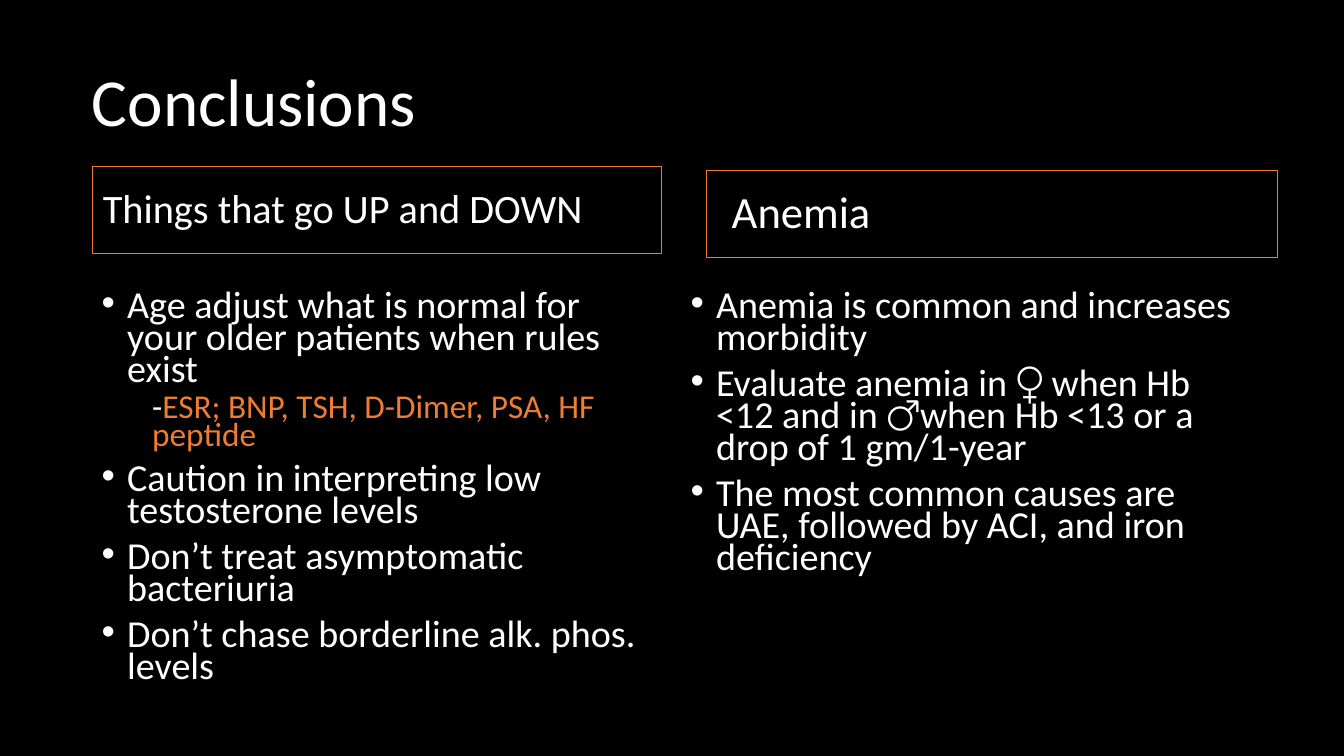
from lxml.etree import SubElement
from pptx import Presentation
from pptx.dml.color import RGBColor
from pptx.enum.text import MSO_ANCHOR, MSO_AUTO_SIZE, PP_ALIGN
from pptx.oxml.ns import qn
from pptx.util import Cm, Pt

COLORS = {"background": "000000", "text": "FFFFFF", "accent": "ED7D31"}
FRAME = {"word_wrap": True, "auto_size": MSO_AUTO_SIZE.NONE}
HEADING_FRAME = {**FRAME, "vertical_anchor": MSO_ANCHOR.MIDDLE}
LIST_FRAME = {**FRAME, "vertical_anchor": MSO_ANCHOR.TOP}
HEADING = {"alignment": PP_ALIGN.LEFT, "line_spacing": 0.9, "space_before": Pt(0)}
BULLET = {"alignment": PP_ALIGN.LEFT, "line_spacing": 0.7, "space_before": Pt(10), "level": 0}
DETAIL = {**BULLET, "space_before": Pt(5), "level": 1}


def place(shape, box, frame_format):
    shape.left, shape.top, shape.width, shape.height = [Cm(length) for length in box]
    for name, value in frame_format.items():
        setattr(shape.text_frame, name, value)
    return shape.text_frame


def write(paragraph, runs, size, paragraph_format):
    for name, value in paragraph_format.items():
        setattr(paragraph, name, value)
    for text, color in runs:
        run = paragraph.add_run()
        run.text = text
        font_format = {"name": "Calibri", "size": Pt(size), "bold": False}
        for name, value in font_format.items():
            setattr(run.font, name, value)
        run.font.color.rgb = RGBColor.from_string(COLORS[color])


presentation = Presentation()
presentation.slide_width = Cm(33.87)
presentation.slide_height = Cm(19.05)
slide = presentation.slides.add_slide(presentation.slide_layouts[4])
slide.background.fill.solid()
slide.background.fill.fore_color.rgb = RGBColor.from_string(COLORS["background"])

title_frame = place(slide.shapes.title, (2.06, 0.79, 29.21, 3.68), HEADING_FRAME)
write(title_frame.paragraphs[0], [("Conclusions", "text")], 48, HEADING)

columns = [
    {
        "heading": "Things that go UP and DOWN",
        "heading_size": 28.8,
        "heading_box": (2.34, 4.2, 14.33, 2.2),
        "heading_inset": 0.25,
        "list_box": (2.31, 7.26, 14.33, 10.24),
        "items": [
            (BULLET, [("Age adjust what is normal for your older patients when rules exist", "text")]),
            (DETAIL, [("-", "text"), ("ESR; BNP, TSH, D-Dimer, PSA, HF peptide", "accent")]),
            (BULLET, [("Caution in interpreting low testosterone levels", "text")]),
            (BULLET, [("Don’t treat asymptomatic bacteriuria", "text")]),
            (BULLET, [("Don’t chase borderline alk. phos. levels", "text")]),
        ],
    },
    {
        "heading": "Anemia",
        "heading_size": 31.9,
        "heading_box": (17.8, 4.3, 14.4, 2.18),
        "heading_inset": 0.64,
        "list_box": (17.15, 7.26, 14.73, 9.63),
        "items": [
            (BULLET, [("Anemia is common and increases morbidity", "text")]),
            (BULLET, [("Evaluate anemia in ♀ when Hb <12 and in ♂when Hb <13 or a drop of 1 gm/1-year", "text")]),
            (BULLET, [("The most common causes are UAE, followed by ACI, and iron deficiency", "text")]),
        ],
    },
]

for index, column in enumerate(columns):
    heading_shape = slide.placeholders[1 + 2 * index]
    heading_frame = place(heading_shape, column["heading_box"], HEADING_FRAME)
    heading_frame.margin_left = Cm(column["heading_inset"])
    heading_shape.line.color.rgb = RGBColor.from_string(COLORS["accent"])
    heading_shape.line.width = Pt(0.75)
    write(heading_frame.paragraphs[0], [(column["heading"], "text")], column["heading_size"], HEADING)

    list_frame = place(slide.placeholders[2 + 2 * index], column["list_box"], LIST_FRAME)
    for position, (item_format, runs) in enumerate(column["items"]):
        paragraph = list_frame.add_paragraph() if position else list_frame.paragraphs[0]
        is_detail = item_format is DETAIL
        write(paragraph, runs, 23.8 if is_detail else 27.2, item_format)
        properties = paragraph._p.get_or_add_pPr()
        properties.set("marL", str(Cm(1.27 if is_detail else 0.64)))
        properties.set("indent", str(Cm(0 if is_detail else -0.64)))
        if is_detail:
            SubElement(properties, qn("a:buNone"))
        else:
            SubElement(properties, qn("a:buFont"), typeface="Arial")
            SubElement(properties, qn("a:buChar"), char="•")

presentation.save("out.pptx")
